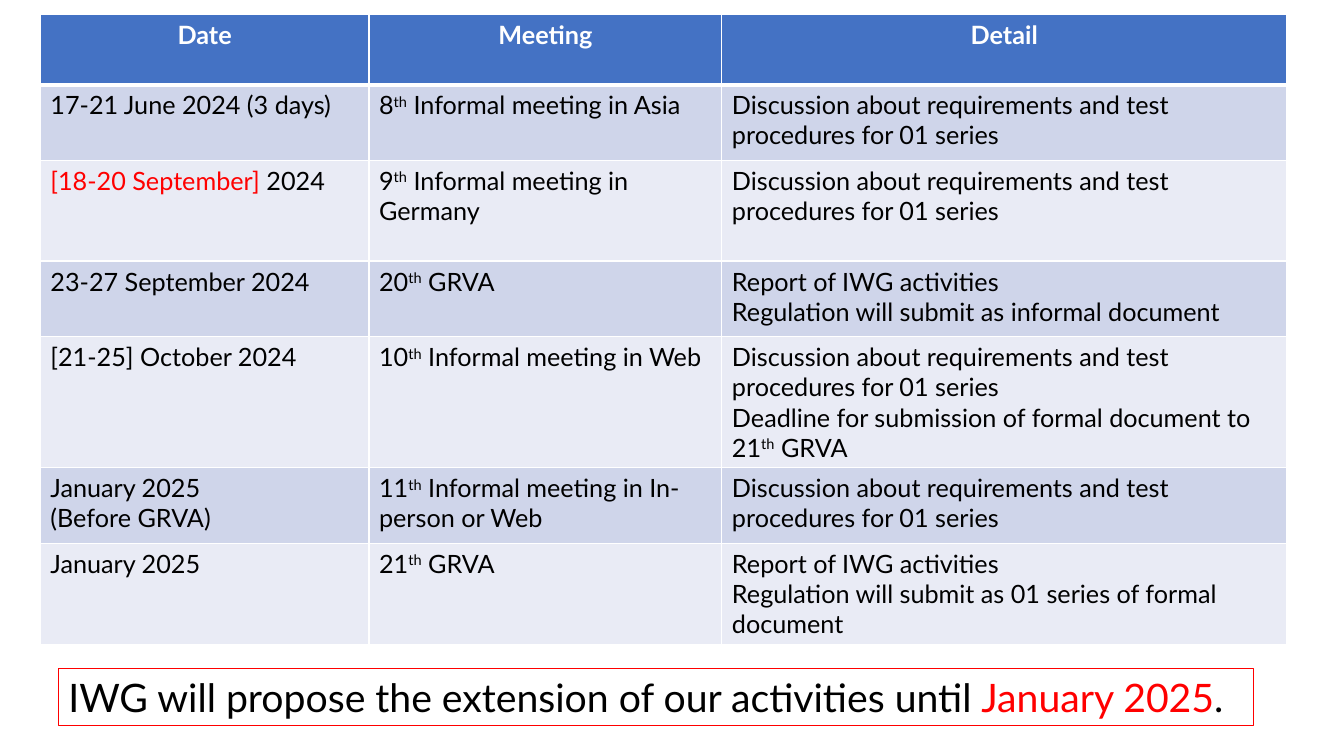
from dataclasses import dataclass

from lxml import etree
from pptx import Presentation
from pptx.dml.color import RGBColor
from pptx.enum.text import MSO_AUTO_SIZE, PP_ALIGN
from pptx.oxml.ns import qn
from pptx.util import Inches, Pt

CENTER = PP_ALIGN.CENTER
GROW = MSO_AUTO_SIZE.SHAPE_TO_FIT_TEXT


@dataclass(frozen=True)
class Theme:
    font: str = "Lato"
    table_size: int = 18
    note_size: int = 28
    white: str = "FFFFFF"
    black: str = "000000"
    red: str = "FF0000"
    header: str = "4472C4"
    bands: tuple = ("CFD5EA", "E9EBF5")


T = Theme()
RED = {"color": T.red}
SUPER = {"raised": True}


def ordinal(number, rest):
    return [number, ("th", SUPER), " " + rest]


DISCUSSION = ["Discussion about requirements and test procedures for 01 series"]
REPORT = ["Report of IWG activities"]
HEADERS = ["Date", "Meeting", "Detail"]
COLUMNS = [3.26, 3.5, 5.6]
ROW_HEIGHTS = [0.7, 0.75, 1, 0.75, 1.3, 0.75, 1]
SCHEDULE = [
    ([["17-21 June 2024 (3 days)"]],
     [ordinal("8", "Informal meeting in Asia")],
     [DISCUSSION]),
    ([[("[18-20 September] ", RED), "2024"]],
     [ordinal("9", "Informal meeting in Germany")],
     [DISCUSSION]),
    ([["23-27 September 2024"]],
     [ordinal("20", "GRVA")],
     [REPORT, ["Regulation will submit as informal document"]]),
    ([["[21-25] October 2024"]],
     [ordinal("10", "Informal meeting in Web")],
     [DISCUSSION,
      ordinal("Deadline for submission of formal document to 21", "GRVA")]),
    ([["January 2025"], ["(Before GRVA)"]],
     [ordinal("11", "Informal meeting in In-person or Web")],
     [DISCUSSION]),
    ([["January 2025"]],
     [ordinal("21", "GRVA")],
     [REPORT, ["Regulation will submit as 01 series of formal document"]]),
]


def add_run(p, text, size=T.table_size, color=T.black, bold=False, raised=False):
    r = p.add_run()
    r.text = text
    r.font.name = T.font
    r.font.size = Pt(size)
    r.font.bold = bold
    r.font.color.rgb = RGBColor.from_string(color)
    if raised:
        r.font._element.set("baseline", "30000")


def fill_text(tf, paragraphs, align=None, **base):
    for i, runs in enumerate(paragraphs):
        p = tf.add_paragraph() if i else tf.paragraphs[0]
        p.alignment = align
        for item in runs:
            text, extra = (item, {}) if isinstance(item, str) else item
            add_run(p, text, **{**base, **extra})


def set_borders(cell, **widths):
    tcPr = cell._tc.get_or_add_tcPr()
    for side in "LRTB":
        width = widths.get(side, 1)
        ln = etree.SubElement(tcPr, qn(f"a:ln{side}"), w=str(Pt(width)))
        fill = etree.SubElement(ln, qn("a:solidFill"))
        etree.SubElement(fill, qn("a:srgbClr"), val=T.white)


def format_cell(cell, paragraphs, fill, borders, **fmt):
    set_borders(cell, **borders)
    cell.fill.solid()
    cell.fill.fore_color.rgb = RGBColor.from_string(fill)
    fill_text(cell.text_frame, paragraphs, **fmt)


def add_schedule(s):
    table = s.shapes.add_table(
        len(ROW_HEIGHTS), len(COLUMNS), Inches(0.4), Inches(0.14),
        Inches(sum(COLUMNS)), Inches(sum(ROW_HEIGHTS))).table
    for column, width in zip(table.columns, COLUMNS):
        column.width = Inches(width)
    for row, height in zip(table.rows, ROW_HEIGHTS):
        row.height = Inches(height)
    for c, title in enumerate(HEADERS):
        format_cell(table.cell(0, c), [[title]], T.header, {"B": 3},
                    align=CENTER, color=T.white, bold=True)
    for i, entry in enumerate(SCHEDULE):
        borders = {} if i else {"T": 3}
        for c, paragraphs in enumerate(entry):
            format_cell(table.cell(i + 1, c), paragraphs, T.bands[i % 2], borders)


def add_note(s, paragraphs, left, top, width, height):
    sp = s.shapes.add_textbox(Inches(left), Inches(top), Inches(width), Inches(height))
    sp.line.color.rgb = RGBColor.from_string(T.red)
    sp.line.width = Pt(0.75)
    tf = sp.text_frame
    tf.word_wrap = True
    tf.auto_size = GROW
    fill_text(tf, paragraphs, size=T.note_size)


def main():
    prs = Presentation()
    prs.slide_width, prs.slide_height = Inches(13.33), Inches(7.5)
    s = prs.slides.add_slide(prs.slide_layouts[6])
    add_schedule(s)
    add_note(s, [["IWG will propose the extension of our activities until ",
                  ("January 2025", RED), "."]], 0.58, 6.63, 11.85, 0.57)
    prs.save("out.pptx")


if __name__ == "__main__":
    main()
